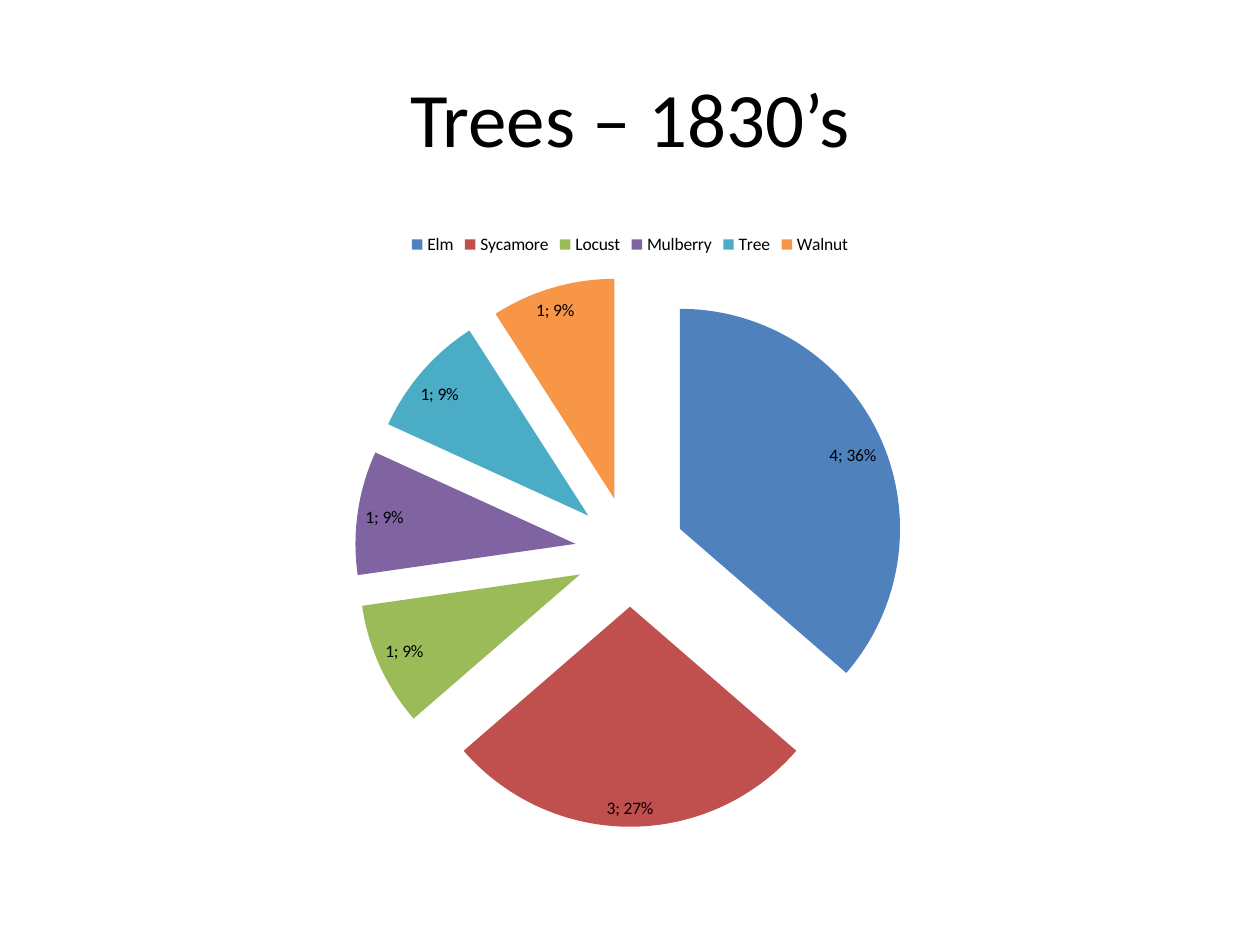
"""Build a slide with an exploded pie chart of tree counts in the 1830's."""
import pptx
import pptx.chart.data
import pptx.dml.color
import pptx.enum.chart
import pptx.enum.text
import pptx.util

COLORS = {
    "text": "000000",
    "Elm": "4F81BD",
    "Sycamore": "C0504D",
    "Locust": "9BBB59",
    "Mulberry": "8064A2",
    "Tree": "4BACC6",
    "Walnut": "F79646",
}
TREES = {"Elm": 4, "Sycamore": 3, "Locust": 1, "Mulberry": 1, "Tree": 1, "Walnut": 1}


def set_font(font, size):
    values = {"name": "Calibri", "size": pptx.util.Pt(size), "bold": False}
    for name, value in values.items():
        setattr(font, name, value)
    font.color.rgb = pptx.dml.color.RGBColor.from_string(COLORS["text"])


presentation = pptx.Presentation()
presentation.slide_width = pptx.util.Inches(10)
presentation.slide_height = pptx.util.Inches(7.5)
width, height = presentation.slide_width, presentation.slide_height
slide = presentation.slides.add_slide(presentation.slide_layouts[6])
left, content_width = int(width * 0.05), int(width * 0.9)

title = slide.shapes.add_textbox(left, int(height * 0.04), content_width, int(height / 6))
frame_format = {
    "word_wrap": True,
    "vertical_anchor": pptx.enum.text.MSO_ANCHOR.MIDDLE,
}
for name, value in frame_format.items():
    setattr(title.text_frame, name, value)
paragraph = title.text_frame.paragraphs[0]
paragraph.alignment = pptx.enum.text.PP_ALIGN.CENTER
run = paragraph.add_run()
run.text = "Trees – 1830’s"
set_font(run.font, 44)

chart_data = pptx.chart.data.CategoryChartData()
chart_data.categories = list(TREES)
chart_data.add_series("Series 1", list(TREES.values()))
chart = slide.shapes.add_chart(
    pptx.enum.chart.XL_CHART_TYPE.PIE_EXPLODED,
    left, int(height * 7 / 30), content_width, int(height * 0.66), chart_data,
).chart
set_font(chart.font, 10)
chart.has_title = False
chart.has_legend = True
legend_format = {
    "position": pptx.enum.chart.XL_LEGEND_POSITION.TOP,
    "include_in_layout": False,
}
for name, value in legend_format.items():
    setattr(chart.legend, name, value)

plot = chart.plots[0]
plot.vary_by_categories = True
series = plot.series[0]
for index, tree in enumerate(TREES):
    fill = series.points[index].format.fill
    fill.solid()
    fill.fore_color.rgb = pptx.dml.color.RGBColor.from_string(COLORS[tree])

for name in ("show_value", "show_percentage"):
    setattr(series.data_labels, name, True)
set_font(series.data_labels.font, 10)

presentation.save("out.pptx")
